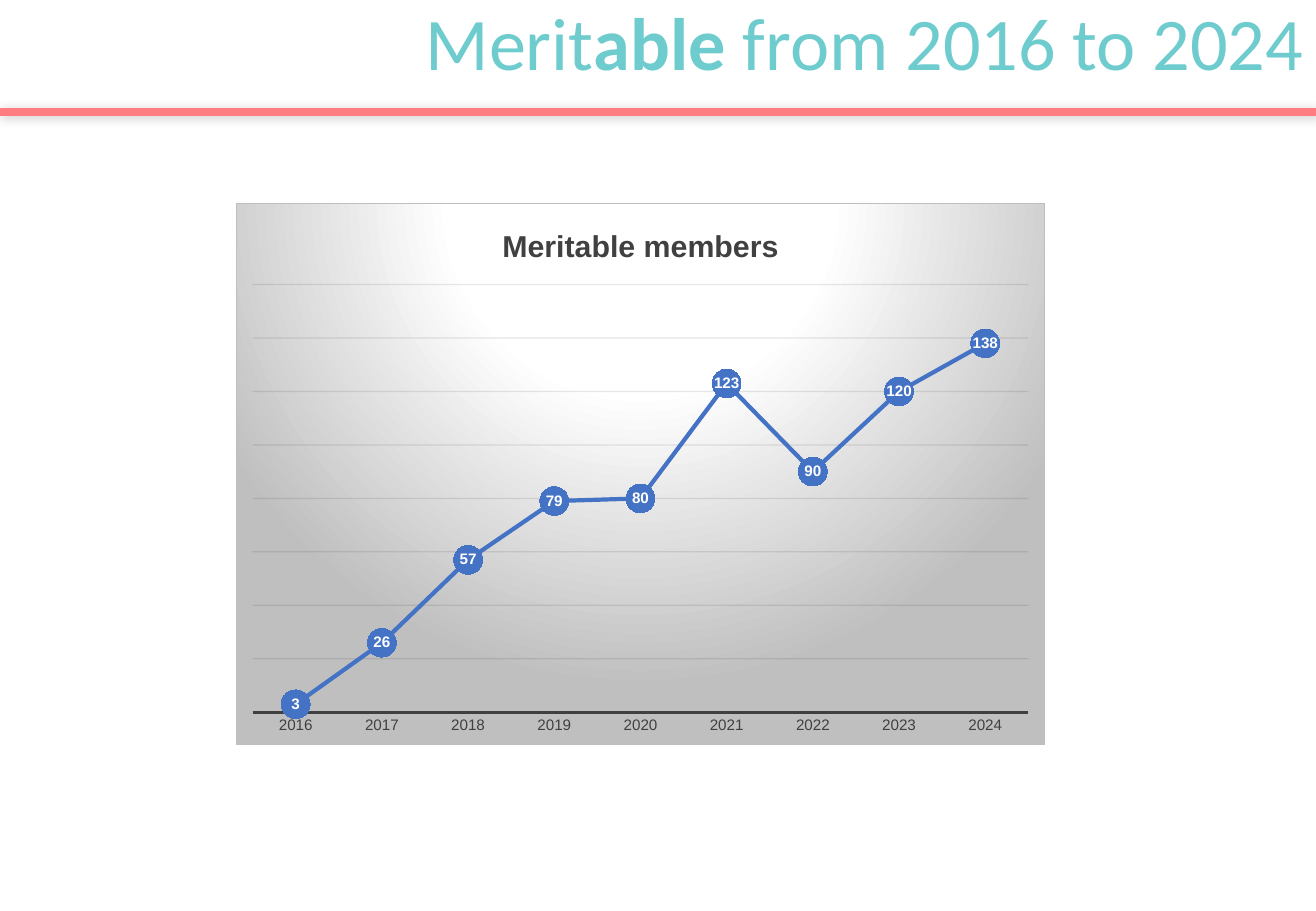
"""Builds a slide with a headline, a rule and a line chart of yearly members."""
import lxml.etree
import pptx
import pptx.chart.data
import pptx.dml.color
import pptx.enum.chart
import pptx.enum.shapes
import pptx.enum.text
import pptx.oxml
import pptx.oxml.ns
import pptx.util

Cm = pptx.util.Cm
Pt = pptx.util.Pt
RGBColor = pptx.dml.color.RGBColor

TEAL = RGBColor(0x6F, 0xCC, 0xCE)
CORAL = RGBColor(0xFF, 0x7C, 0x80)
BLUE = RGBColor(0x44, 0x72, 0xC4)
DARK_GRAY = RGBColor(0x40, 0x40, 0x40)
NEAR_BLACK = RGBColor(0x0D, 0x0D, 0x0D)
SILVER = RGBColor(0xBF, 0xBF, 0xBF)
WHITE = RGBColor(0xFF, 0xFF, 0xFF)
BLACK = RGBColor(0, 0, 0)

SLIDE_WIDTH, SLIDE_HEIGHT = Cm(27.51), Cm(19.05)
FIRST_YEAR = 2016
MEMBERS = (3, 26, 57, 79, 80, 123, 90, 120, 138)
NAMESPACES = pptx.oxml.ns.nsdecls("a", "c")


def style_font(font, size, color, name="Arial", bold=False):
    """Sets the size, colour, typeface and weight of a font."""
    font.size, font.name, font.bold = Pt(size), name, bold
    font.color.rgb = color


def add_headline(slide, left, top, width, height):
    """Adds the right-aligned headline with its stressed syllables."""
    headline = slide.shapes.add_textbox(left, top, width, height).text_frame
    headline.word_wrap = True
    headline.vertical_anchor = pptx.enum.text.MSO_ANCHOR.TOP
    sentence = headline.paragraphs[0]
    sentence.alignment = pptx.enum.text.PP_ALIGN.RIGHT
    sentence.line_spacing = 0.9
    style_font(sentence.font, 44, TEAL, "Calibri")
    for words, bold in (("Merit", False), ("able", True), (" from 2016 to 2024", False)):
        part = sentence.add_run()
        part.text = words
        part.font.bold = bold


def add_rule(slide, left, top, width):
    """Adds the coral rule with its soft shadow."""
    rule = slide.shapes.add_connector(
        pptx.enum.shapes.MSO_CONNECTOR.STRAIGHT, left, top, left + width, top)
    rule.line.color.rgb = CORAL
    rule.line.width = Pt(5)
    rule._element.spPr.append(pptx.oxml.parse_xml(
        f'<a:effectLst {NAMESPACES}>'
        f'<a:outerShdw blurRad="{Pt(6)}" dist="{Pt(1)}" dir="2700000" rotWithShape="0">'
        f'<a:srgbClr val="{BLACK}"><a:alpha val="20000"/></a:srgbClr>'
        '</a:outerShdw></a:effectLst>'))


def paint_chart_area(chart):
    """Gives the chart its radial background, border and plot position."""
    stops = "".join(
        f'<a:gs pos="{position * 1000}"><a:srgbClr val="{color}"/></a:gs>'
        for position, color in ((0, WHITE), (39, WHITE), (100, SILVER)))
    background = pptx.oxml.parse_xml(
        f'<c:spPr {NAMESPACES}><a:gradFill><a:gsLst>{stops}</a:gsLst>'
        '<a:path path="circle">'
        '<a:fillToRect l="50000" t="-80000" r="50000" b="180000"/></a:path></a:gradFill>'
        f'<a:ln w="{Pt(0.75)}"><a:solidFill><a:srgbClr val="{SILVER}"/></a:solidFill></a:ln>'
        '</c:spPr>')
    space = chart._chartSpace
    space.find(pptx.oxml.ns.qn("c:txPr")).addprevious(background)
    space.find(pptx.oxml.ns.qn("c:date1904")).addnext(
        pptx.oxml.parse_xml(f'<c:roundedCorners {NAMESPACES} val="0"/>'))

    plot_area = space.chart.plotArea
    for automatic in plot_area.findall(pptx.oxml.ns.qn("c:layout")):
        plot_area.remove(automatic)
    bounds = "".join(
        f'<c:{key} val="{share}"/>'
        for key, share in (("x", 0.02), ("y", 0.15), ("w", 0.96), ("h", 0.79)))
    plot_area.insert(0, pptx.oxml.parse_xml(
        f'<c:layout {NAMESPACES}><c:manualLayout><c:layoutTarget val="inner"/>'
        f'<c:xMode val="edge"/><c:yMode val="edge"/>{bounds}</c:manualLayout></c:layout>'))


def style_axes(chart):
    """Styles the year axis and the hidden scale with its faint grid."""
    years = chart.category_axis
    years.major_tick_mark = pptx.enum.chart.XL_TICK_MARK.NONE
    years.has_major_gridlines = False
    years.format.line.color.rgb = DARK_GRAY
    years.format.line.width = Pt(1.5)
    style_font(years.tick_labels.font, 9, DARK_GRAY)

    scale = chart.value_axis
    scale.visible = False
    scale.minimum_scale, scale.maximum_scale, scale.major_unit = 0, 160, 20
    scale.has_major_gridlines = True
    grid = scale.major_gridlines.format.line
    grid.color.rgb = NEAR_BLACK
    grid.width = Pt(0.75)
    for tint in scale._element.iter(pptx.oxml.ns.qn("a:srgbClr")):
        lxml.etree.SubElement(tint, pptx.oxml.ns.qn("a:alpha")).set("val", "10000")


def style_members(plot):
    """Styles the member line, its round markers and their labels."""
    plot.vary_by_categories = False
    members = plot.series[0]
    members.smooth = False
    members.format.line.color.rgb = BLUE
    members.format.line.width = Pt(2.5)
    members.marker.style = pptx.enum.chart.XL_MARKER_STYLE.CIRCLE
    members.marker.size = 17
    members.marker.format.fill.solid()
    members.marker.format.fill.fore_color.rgb = BLUE
    members.marker.format.line.fill.background()
    counts = members.data_labels
    counts.show_value = True
    counts.position = pptx.enum.chart.XL_LABEL_POSITION.CENTER
    style_font(counts.font, 9, WHITE, bold=True)


def add_member_chart(slide, left, top, width, height):
    """Adds the chart of members per year."""
    history = pptx.chart.data.CategoryChartData()
    history.categories = [str(FIRST_YEAR + offset) for offset in range(len(MEMBERS))]
    history.add_series("Series 1", MEMBERS)
    chart = slide.shapes.add_chart(
        pptx.enum.chart.XL_CHART_TYPE.LINE_MARKERS, left, top, width, height, history).chart
    style_font(chart.font, 10, BLACK)
    chart.has_legend = False
    chart.has_title = True
    heading = chart.chart_title.text_frame
    heading.text = "Meritable members"
    style_font(heading.paragraphs[0].font, 18, DARK_GRAY, bold=True)
    chart.chart_title.include_in_layout = False
    paint_chart_area(chart)
    style_axes(chart)
    style_members(chart.plots[0])


def main():
    """Builds and saves the presentation."""
    deck = pptx.Presentation()
    deck.slide_width, deck.slide_height = SLIDE_WIDTH, SLIDE_HEIGHT
    slide = deck.slides.add_slide(deck.slide_layouts[6])
    add_headline(slide, Cm(3.78), Cm(0), Cm(23.73), Cm(3.68))
    add_rule(slide, Cm(0), Cm(2.34), SLIDE_WIDTH)
    add_member_chart(slide, Cm(4.93), Cm(4.24), Cm(16.92), Cm(11.35))
    deck.save("out.pptx")


if __name__ == "__main__":
    main()
